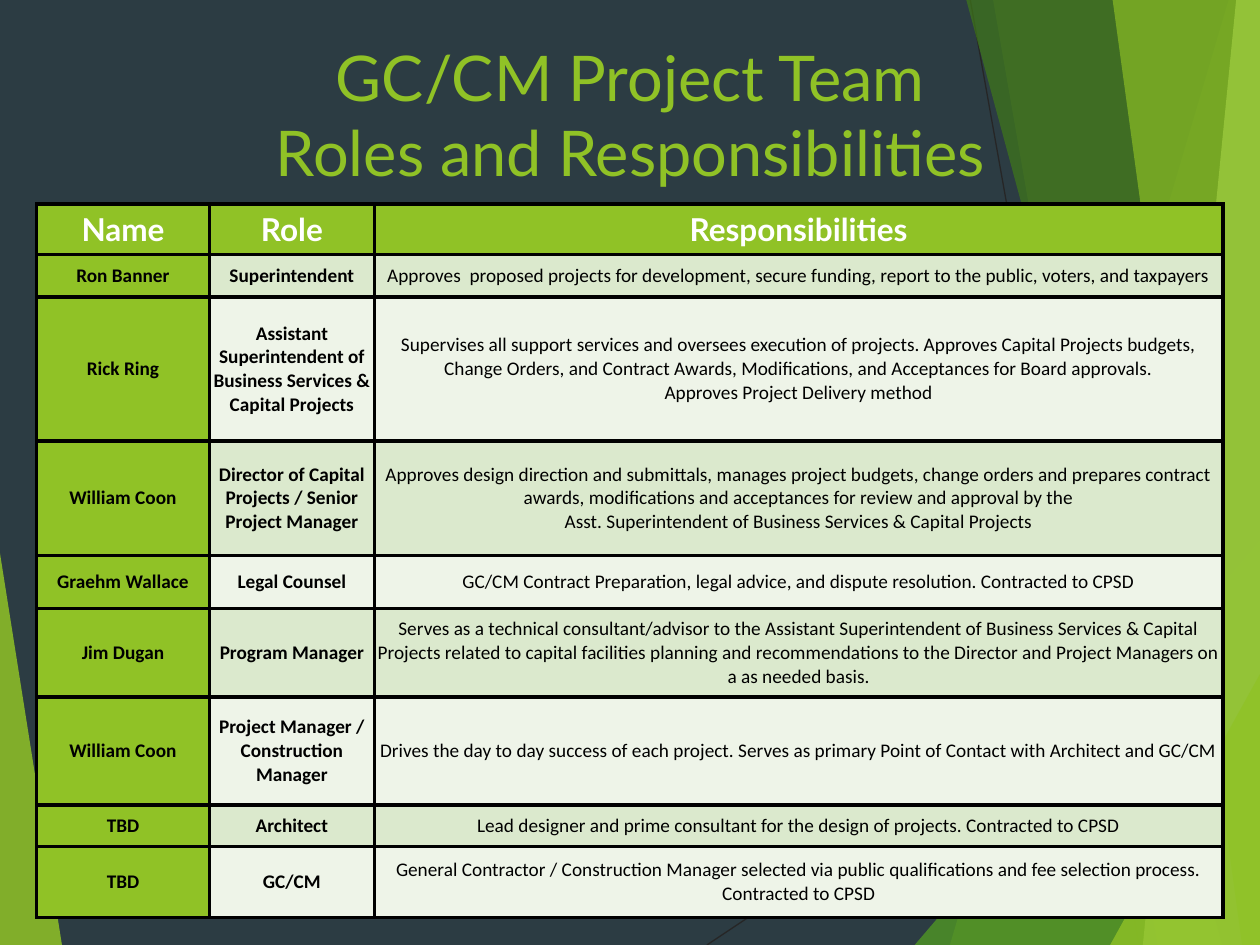
from collections import namedtuple

from lxml import etree
from pptx import Presentation
from pptx import util as u
from pptx.dml.color import RGBColor
from pptx.enum import shapes, text
from pptx.oxml import ns

COLORS = {
    "night": "2C3C43", "lime": "90C226", "leaf": "54A021", "forest": "3F7819",
    "pale": "C0E474", "hairline": "262626", "black": "000000", "white": "FFFFFF",
    "band_dark": "DBE9CD", "band_light": "EEF4E8",
}
Box = namedtuple("Box", "left top width height")
PAGE = Box(0, 0, 25.4, 19.05)
TITLE = Box(3.89, 0.64, 17.63, 3.66)
TABLE = Box(0.74, 4.11, 23.91, 14.38)

COLUMN_WIDTHS = [3.48, 3.33, 17.1]
ROW_HEIGHTS = [1.02, 0.86, 2.9, 2.31, 1.07, 1.78, 2.18, 0.84, 1.42]
HEADINGS = ["Name", "Role", "Responsibilities"]
TEAM = [
    ("Ron Banner", "Superintendent",
     "Approves  proposed projects for development, secure funding, report to the public, "
     "voters, and taxpayers"),
    ("Rick Ring", "Assistant Superintendent of Business Services & Capital Projects",
     "Supervises all support services and oversees execution of projects. Approves Capital "
     "Projects budgets, Change Orders, and Contract Awards, Modifications, and Acceptances "
     "for Board approvals.\nApproves Project Delivery method"),
    ("William Coon", "Director of Capital Projects / Senior Project Manager",
     "Approves design direction and submittals, manages project budgets, change orders and "
     "prepares contract awards, modifications and acceptances for review and approval by the\n"
     "Asst. Superintendent of Business Services & Capital Projects"),
    ("Graehm Wallace", "Legal Counsel",
     "GC/CM Contract Preparation, legal advice, and dispute resolution. Contracted to CPSD"),
    ("Jim Dugan", "Program Manager",
     "Serves as a technical consultant/advisor to the Assistant Superintendent of Business "
     "Services & Capital Projects related to capital facilities planning and recommendations "
     "to the Director and Project Managers on a as needed basis."),
    ("William Coon", "Project Manager / Construction Manager",
     "Drives the day to day success of each project. Serves as primary Point of Contact with "
     "Architect and GC/CM"),
    ("TBD", "Architect",
     "Lead designer and prime consultant for the design of projects. Contracted to CPSD"),
    ("TBD", "GC/CM",
     "General Contractor / Construction Manager selected via public qualifications and fee "
     "selection process. Contracted to CPSD"),
]


def rgb(name):
    return RGBColor.from_string(COLORS[name])


def write(frame, words, font, size, color, bold=False):
    para = frame.paragraphs[0]
    para.alignment = text.PP_ALIGN.CENTER
    for index, line in enumerate(words.split("\n")):
        if index:
            para.add_line_break()
        span = para.add_run()
        span.text = line
        span.font.name = font
        span.font.size = u.Pt(size)
        span.font.bold = bold
        span.font.color.rgb = rgb(color)


def add_hairline(page, box, start, end):
    line = page.shapes.add_connector(
        shapes.MSO_CONNECTOR.STRAIGHT,
        u.Cm(box.left + start[0]), u.Cm(box.top + start[1]),
        u.Cm(box.left + end[0]), u.Cm(box.top + end[1]))
    line.line.color.rgb = rgb("hairline")
    line.line.width = u.Pt(0.75)
    etree.SubElement(line._element.spPr, ns.qn("a:effectLst"))


def add_ribbon(page, box, points, color, opacity):
    corners = [(u.Cm(box.left + x), u.Cm(box.top + y)) for x, y in points]
    builder = page.shapes.build_freeform(*corners[0])
    builder.add_line_segments(corners[1:], close=True)
    ribbon = builder.convert_to_shape()
    ribbon.shadow.inherit = False
    ribbon.line.fill.background()
    ribbon.fill.solid()
    ribbon.fill.fore_color.rgb = rgb(color)
    tint = ribbon._element.spPr.find(".//" + ns.qn("a:srgbClr"))
    etree.SubElement(tint, ns.qn("a:alpha"), val=str(opacity * 1000))


def add_backdrop(page, box):
    right, bottom = box.width, box.height

    def band(top_x, bottom_x):
        return [(top_x, 0), (bottom_x, bottom), (right, bottom), (right, 0)]

    def wedge(bottom_x, right_y):
        return [(bottom_x, bottom), (right, right_y), (right, bottom)]

    add_hairline(page, box, (14.25, bottom), (right, 11.61))
    add_hairline(page, box, (19.56, 0), (22.96, bottom))
    for points, color, opacity in [
        ([(0, 11.15), (1.25, bottom), (0, bottom)], "lime", 85),
        (band(24.77, 19.15), "lime", 30),
        (band(20.02, 23.34), "lime", 20),
        (wedge(18.44, 10.9), "leaf", 72),
        (band(19.48, 24.64), "forest", 70),
        (band(24.92, 23.04), "pale", 70),
        (band(22.43, 25.04), "lime", 65),
        (wedge(22.38, 13.59), "lime", 80),
    ]:
        add_ribbon(page, box, points, color, opacity)


def add_title(page, box):
    title = page.shapes.title
    title.left, title.top, title.width, title.height = map(u.Cm, box)
    frame = title.text_frame
    frame.word_wrap = True
    frame.auto_size = text.MSO_AUTO_SIZE.NONE
    frame.vertical_anchor = text.MSO_ANCHOR.TOP
    write(frame, "GC/CM Project Team\nRoles and Responsibilities", "Lato", 36, "lime")
    page.shapes._spTree.append(title._element)


def style_cell(cell, color):
    properties = cell._tc.get_or_add_tcPr()
    for side in ("lnL", "lnR", "lnT", "lnB"):
        edge = etree.SubElement(properties, ns.qn("a:" + side), w=str(u.Pt(2.25)))
        fill = etree.SubElement(edge, ns.qn("a:solidFill"))
        etree.SubElement(fill, ns.qn("a:srgbClr"), val=COLORS["black"])
    cell.fill.solid()
    cell.fill.fore_color.rgb = rgb(color)


def add_team_table(page, box):
    table = page.shapes.add_table(
        len(ROW_HEIGHTS), len(COLUMN_WIDTHS), *map(u.Cm, box)).table
    for column, width in zip(table.columns, COLUMN_WIDTHS):
        column.width = u.Cm(width)
    for row, height in zip(table.rows, ROW_HEIGHTS):
        row.height = u.Cm(height)
    for column, heading in enumerate(HEADINGS):
        cell = table.cell(0, column)
        style_cell(cell, "lime")
        write(cell.text_frame, heading, "Lato", 18, "white", bold=True)
    for row, member in enumerate(TEAM, start=1):
        band = "band_dark" if row % 2 else "band_light"
        for column, words in enumerate(member):
            cell = table.cell(row, column)
            style_cell(cell, band if column else "lime")
            cell.vertical_anchor = text.MSO_ANCHOR.MIDDLE
            cell.margin_left = cell.margin_right = 0
            cell.margin_top = cell.margin_bottom = 0
            write(cell.text_frame, words, "Calibri", 11, "black", bold=column < 2)


def main():
    deck = Presentation()
    deck.slide_width, deck.slide_height = u.Cm(PAGE.width), u.Cm(PAGE.height)
    page = deck.slides.add_slide(deck.slide_layouts.get_by_name("Title Only"))
    page.background.fill.solid()
    page.background.fill.fore_color.rgb = rgb("night")
    add_backdrop(page, PAGE)
    add_title(page, TITLE)
    add_team_table(page, TABLE)
    deck.save("out.pptx")


if __name__ == "__main__":
    main()
